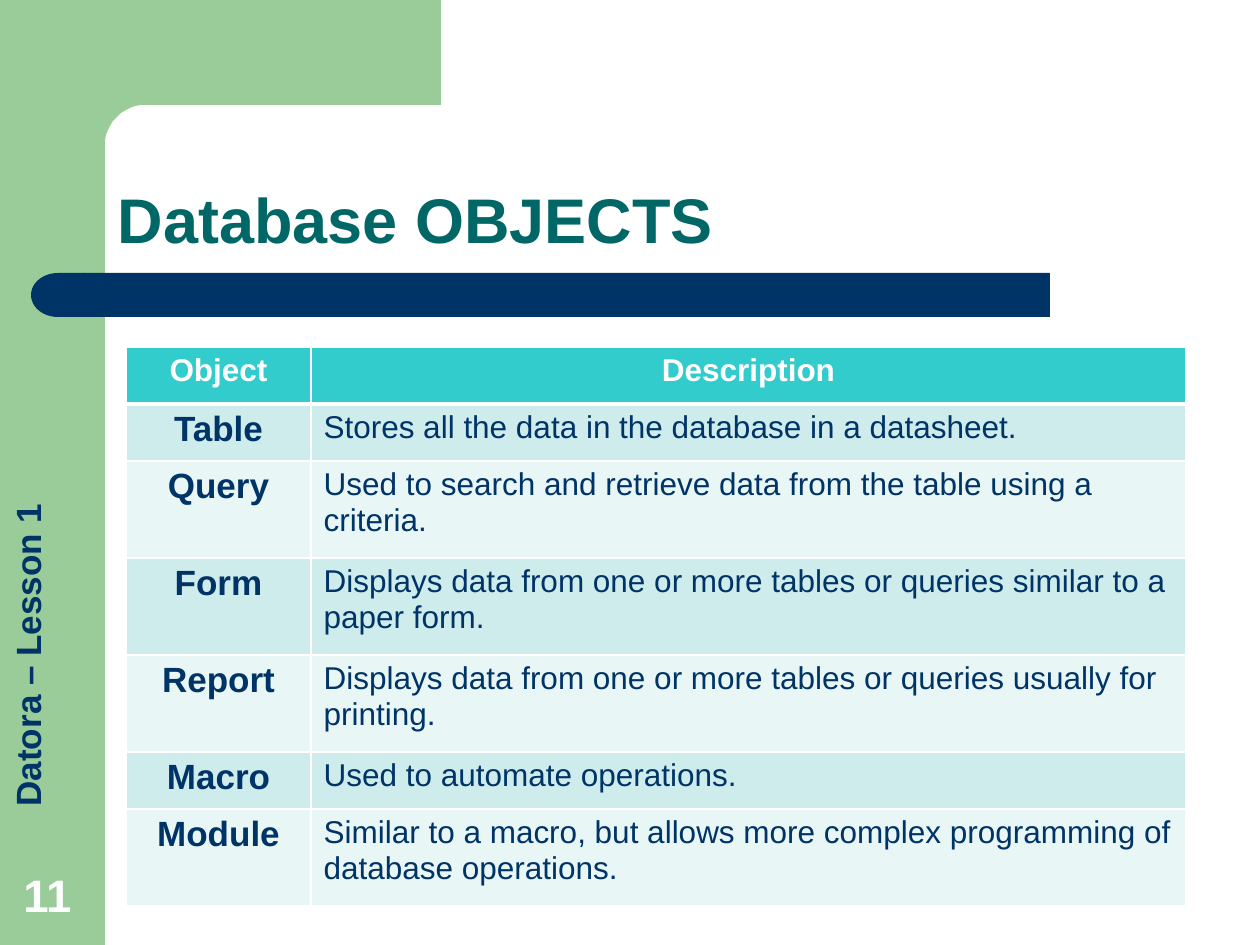
"""Build the slide that describes the database objects."""
import math

import lxml.etree
import pptx
import pptx.dml.color
import pptx.enum.shapes
import pptx.enum.text
import pptx.oxml.ns
import pptx.util

TITLE = "Database OBJECTS"
LESSON = "Datora – Lesson 1"
NUMBER = "11"
HEADER = ("Object", "Description")
OBJECTS = [
    ("Table", "Stores all the data in the database in a datasheet."),
    ("Query", "Used to search and retrieve data from the table using a criteria."),
    ("Form", "Displays data from one or more tables or queries similar to a paper form."),
    ("Report", "Displays data from one or more tables or queries usually for printing."),
    ("Macro", "Used to automate operations."),
    ("Module", "Similar to a macro, but allows more complex programming of database operations."),
]
COLORS = {"green": "99CC99", "navy": "003366", "teal": "006666", "header": "33CCCC",
          "odd": "CEECEC", "even": "E8F6F6", "white": "FFFFFF"}
FONT = "Arial"
SCALE = 914400 / 126
COLUMNS = (185, 875)
ONE_LINE, TWO_LINES = 57, 97
LINE_LIMIT = 55

SHAPES = pptx.enum.shapes.MSO_SHAPE
ANCHOR = pptx.enum.text.MSO_ANCHOR
ALIGN = pptx.enum.text.PP_ALIGN


def px(*lengths):
    return [pptx.util.Emu(round(length * SCALE)) for length in lengths]


def rgb(name):
    return pptx.dml.color.RGBColor.from_string(COLORS[name])


def paint(shape, color):
    shape.shadow.inherit = False
    shape.fill.solid()
    shape.fill.fore_color.rgb = rgb(color)
    shape.line.fill.background()


def add_block(slide, kind, box, color):
    block = slide.shapes.add_shape(kind, *px(*box))
    paint(block, color)
    return block


def write(frame, text, size, color, bold=True, align=ALIGN.LEFT):
    paragraph = frame.paragraphs[0]
    paragraph.alignment = align
    run = paragraph.add_run()
    run.text = text
    run.font.name = FONT
    run.font.size = pptx.util.Pt(size)
    run.font.bold = bold
    run.font.color.rgb = rgb(color)
    return paragraph


def add_label(slide, box, text, size, color, anchor):
    label = slide.shapes.add_textbox(*px(*box)).text_frame
    label.word_wrap = True
    label.vertical_anchor = anchor
    write(label, text, size, color)
    return label


def add_corner(slide):
    left, inner, right, bottom, radius = 63, 105, 441, 161, 41
    center = inner + radius
    angles = [math.radians(90 * step / 12) for step in range(13)]
    arc = [(center - radius * math.sin(a), center - radius * math.cos(a)) for a in angles]
    outline = [(right, inner), *arc, (inner, bottom), (left, bottom), (left, 0)]
    builder = slide.shapes.build_freeform(right, 0, scale=SCALE)
    builder.add_line_segments(outline, close=True)
    paint(builder.convert_to_shape(), "green")


def fill_cell(cell, color, bottom_width):
    cell.fill.solid()
    cell.fill.fore_color.rgb = rgb(color)
    properties = cell._tc.get_or_add_tcPr()
    widths = {"lnL": 1, "lnR": 1, "lnT": 1, "lnB": bottom_width}
    for position, (side, width) in enumerate(widths.items()):
        line = lxml.etree.Element(pptx.oxml.ns.qn(f"a:{side}"), w=str(pptx.util.Pt(width)))
        solid = lxml.etree.SubElement(line, pptx.oxml.ns.qn("a:solidFill"))
        lxml.etree.SubElement(solid, pptx.oxml.ns.qn("a:srgbClr"), val=COLORS["white"])
        properties.insert(position, line)


def add_objects(slide):
    heights = [ONE_LINE] + [TWO_LINES if len(description) > LINE_LIMIT else ONE_LINE
                            for _, description in OBJECTS]
    box = px(126, 347, sum(COLUMNS), sum(heights))
    table = slide.shapes.add_table(len(heights), len(COLUMNS), *box).table
    for column, width in zip(table.columns, px(*COLUMNS)):
        column.width = width
    for row, height in zip(table.rows, px(*heights)):
        row.height = height
    for cell, heading in zip(table.rows[0].cells, HEADER):
        fill_cell(cell, "header", 3)
        write(cell.text_frame, heading, 18, "white", align=ALIGN.CENTER)
    for index, (name, description) in enumerate(OBJECTS, 1):
        name_cell, description_cell = table.rows[index].cells
        for cell in (name_cell, description_cell):
            fill_cell(cell, "odd" if index % 2 else "even", 1)
        write(name_cell.text_frame, name, 20, "navy", align=ALIGN.CENTER)
        write(description_cell.text_frame, description, 18, "navy", bold=False)


def main():
    deck = pptx.Presentation()
    deck.slide_width, deck.slide_height = px(1260, 945)
    slide = deck.slides.add_slide(deck.slide_layouts[5])

    add_block(slide, SHAPES.RECTANGLE, (0, 0, 105, 945), "green")
    add_corner(slide)
    add_block(slide, SHAPES.RECTANGLE, (84, 273, 966, 44), "navy")
    bar_end = add_block(slide, SHAPES.FLOWCHART_DELAY, (31, 273, 54, 44), "navy")
    bar_end.element.spPr.get_or_add_xfrm().set("flipH", "1")

    lesson = add_label(slide, (0, 451, 67, 368), LESSON, 20, "navy", ANCHOR.TOP)
    lesson._txBody.bodyPr.set("vert", "vert270")
    add_label(slide, (11, 861, 81, 67), NUMBER, 26, "white", ANCHOR.BOTTOM)

    title = slide.shapes.title
    title.left, title.top, title.width, title.height = px(105, 105, 1092, 158)
    title.text_frame.auto_size = pptx.enum.text.MSO_AUTO_SIZE.NONE
    title.text_frame.vertical_anchor = ANCHOR.BOTTOM
    write(title.text_frame, TITLE, 36, "teal").line_spacing = 0.9

    add_objects(slide)
    deck.save("out.pptx")


if __name__ == "__main__":
    main()
